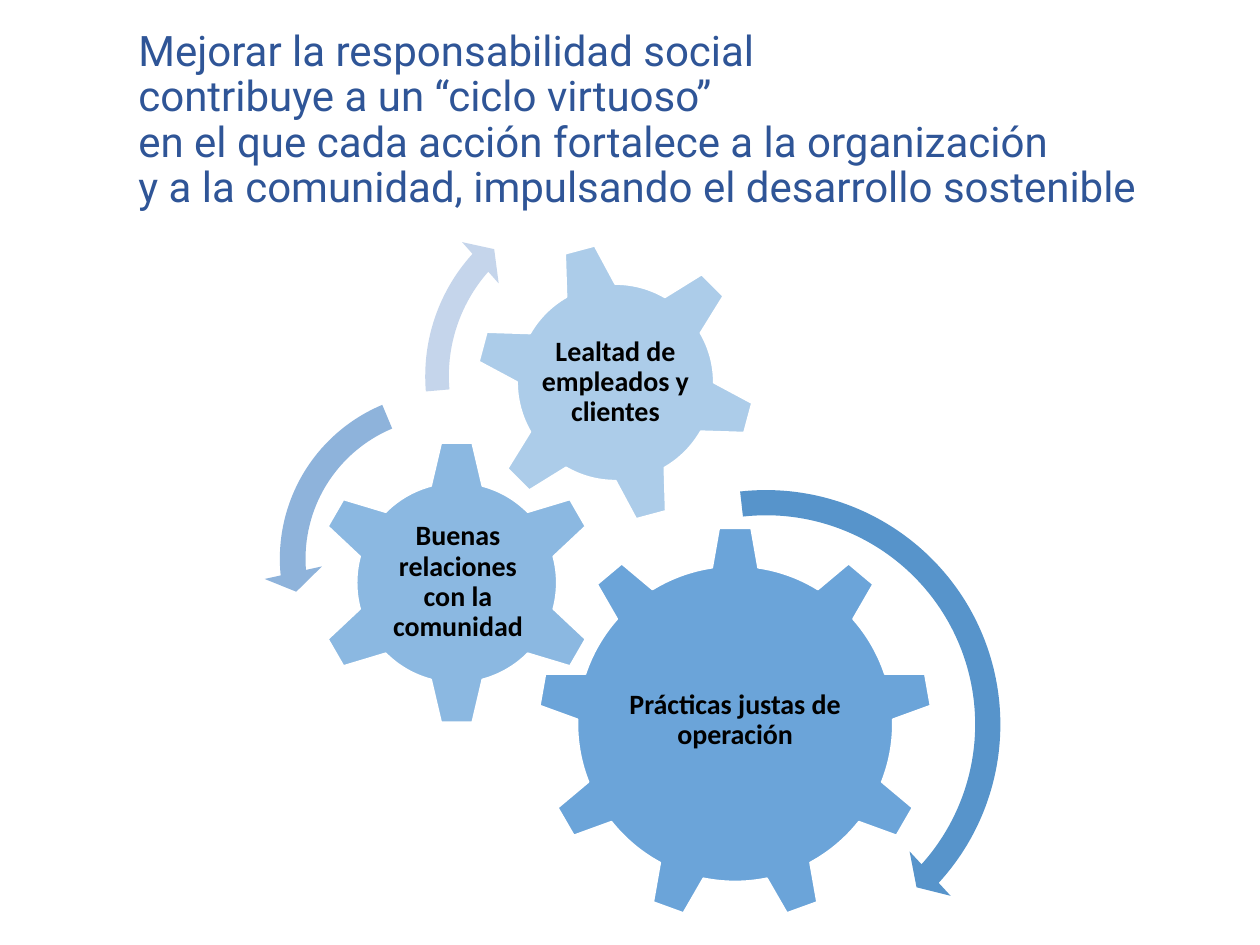
from lxml import etree
from pptx import Presentation
from pptx.dml.color import RGBColor
from pptx.enum.shapes import MSO_SHAPE
from pptx.enum.text import MSO_ANCHOR, PP_ALIGN
from pptx.oxml.ns import qn
from pptx.util import Inches, Pt

GEAR_6, GEAR_9 = MSO_SHAPE.GEAR_6, MSO_SHAPE.GEAR_9
ARROW, LEFT_ARROW = MSO_SHAPE.CIRCULAR_ARROW, MSO_SHAPE.LEFT_CIRCULAR_ARROW
MIDDLE = MSO_ANCHOR.MIDDLE
LEFT, CENTER = PP_ALIGN.LEFT, PP_ALIGN.CENTER

COLORS = {
    "title": "2F5597",
    "text": "000000",
    "outline": "FFFFFF",
    "gear": "5B9BD5",
    "arrow_dark": "5794CB",
    "arrow_mid": "8EB3DB",
    "arrow_light": "C5D5EB",
}

TITLE = (
    "Mejorar la responsabilidad social\n"
    "contribuye a un “ciclo virtuoso”\n"
    "en el que cada acción fortalece a la organización\n"
    "y a la comunidad, impulsando el desarrollo sostenible"
)

# kind, left, top, size, rotation, opacity %, label, label box
GEARS = [
    (GEAR_9, 4.27, 4.18, 3.13, 0, 90, "Prácticas justas de operación",
     (4.9, 4.91, 1.87, 1.61)),
    (GEAR_6, 2.49, 3.49, 2.27, 0, 70, "Buenas relaciones con la comunidad",
     (3.07, 4.06, 1.13, 1.12)),
    (GEAR_6, 3.77, 1.92, 2.23, 345, 50, "Lealtad de empleados y clientes",
     (4.26, 2.41, 1.25, 1.25)),
]

# kind, left, top, size, color, adjustments
ARROWS = [
    (ARROW, 4.08, 3.75, 4, "arrow_dark", (0.05, 2.99, 25.36, 158.2, 0.06)),
    (LEFT_ARROW, 2.09, 2.98, 2.91, "arrow_mid", (0.07, 4.3, 104.89, 148.38, 0.08)),
    (ARROW, 3.25, 1.42, 3.13, "arrow_light", (0.06, 3.94, 133.14, 105.08, 0.07)),
]


def rgb(name):
    return RGBColor.from_string(COLORS[name])


def add_text(slide, text, box, *, size, font, color, bold=False, align=LEFT, inset=None):
    tf = slide.shapes.add_textbox(*map(Inches, box)).text_frame
    tf.word_wrap = True
    tf.vertical_anchor = MIDDLE
    if inset is not None:
        tf.margin_left = tf.margin_top = tf.margin_right = tf.margin_bottom = Inches(inset)
    p = tf.paragraphs[0]
    p.text = text
    p.alignment = align
    p.line_spacing = 0.9
    for r in p.runs:
        r.font.size = Pt(size)
        r.font.name = font
        r.font.bold = bold
        r.font.color.rgb = rgb(color)


def add_square_shape(slide, kind, left, top, size, color):
    """Add a filled preset shape of equal width and height."""
    sp = slide.shapes.add_shape(kind, *map(Inches, (left, top, size, size)))
    sp.shadow.inherit = False
    sp.fill.solid()
    sp.fill.fore_color.rgb = rgb(color)
    return sp


def set_opacity(sp, percent):
    clr = sp.fill._xPr.find(qn("a:solidFill")).find(qn("a:srgbClr"))
    etree.SubElement(clr, qn("a:alpha")).set("val", str(percent * 1000))


def add_gear(slide, kind, left, top, size, rotation, opacity, label, label_box):
    sp = add_square_shape(slide, kind, left, top, size, "gear")
    sp.rotation = rotation
    set_opacity(sp, opacity)
    sp.line.color.rgb = rgb("outline")
    sp.line.width = Pt(1)
    add_text(slide, label, label_box, size=16, font="Calibri", color="text",
             bold=True, align=CENTER, inset=0.02)


def add_arrow(slide, kind, left, top, size, color, adjustments):
    sp = add_square_shape(slide, kind, left, top, size, color)
    sp.line.fill.background()
    for i, value in enumerate(adjustments):
        sp.adjustments[i] = value


def main():
    prs = Presentation()
    prs.slide_width, prs.slide_height = Inches(10), Inches(7.5)
    slide = prs.slides.add_slide(prs.slide_layouts[6])
    add_text(slide, TITLE, (1, 0.17, 8.5, 1.58), size=24, font="Roboto", color="title")
    for gear in GEARS:
        add_gear(slide, *gear)
    for arrow in ARROWS:
        add_arrow(slide, *arrow)
    prs.save("out.pptx")


if __name__ == "__main__":
    main()
